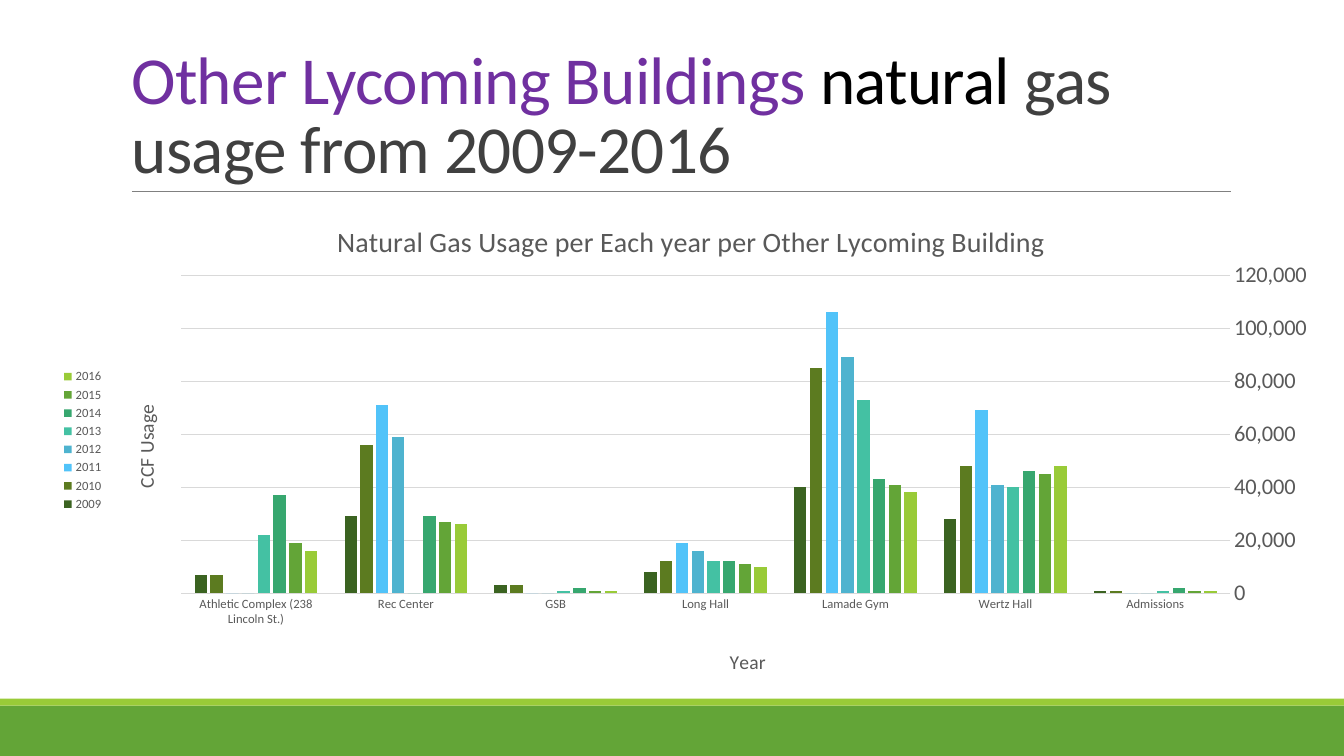
from lxml import etree
from pptx import Presentation
from pptx.chart.data import CategoryChartData
from pptx.dml.color import RGBColor
from pptx.enum import chart as charts, shapes, text
from pptx.oxml import ns
from pptx.util import Pt

FONT = "Calibri"
GREY, RULE_GREY, GRID_GREY = "595959", "808080", "D9D9D9"
BUILDINGS = ["Admissions", "Wertz Hall", "Lamade Gym", "Long Hall", "GSB",
             "Rec Center", "Athletic Complex (238 Lincoln St.)"]
# Year: colour, usage in thousands of CCF for each building
USAGE = {
    "2016": ("99CB38", [1, 48, 38, 10, 1, 26, 16]),
    "2015": ("63A537", [1, 45, 41, 11, 1, 27, 19]),
    "2014": ("37A76F", [2, 46, 43, 12, 2, 29, 37]),
    "2013": ("44C1A3", [1, 40, 73, 12, 1, 0, 22]),
    "2012": ("4EB3CF", [0, 41, 89, 16, 0, 59, 0]),
    "2011": ("51C3F9", [0, 69, 106, 19, 0, 71, 0]),
    "2010": ("5C7B20", [1, 48, 85, 12, 3, 56, 7]),
    "2009": ("3B6321", [1, 28, 40, 8, 3, 29, 7]),
}


def colour(value):
    return RGBColor.from_string(value)


def style_font(font, size, fill):
    font.name, font.size, font.bold = FONT, Pt(size), False
    font.color.rgb = colour(fill)


def add_band(page, top, height, fill):
    band = page.shapes.add_shape(shapes.MSO_SHAPE.RECTANGLE,
                                 0, Pt(top), Pt(960), Pt(height))
    band.shadow.inherit = False
    band.fill.solid()
    band.fill.fore_color.rgb = colour(fill)
    band.line.fill.background()


def add_rule(page, left, right, top):
    rule = page.shapes.add_connector(shapes.MSO_CONNECTOR.STRAIGHT,
                                     Pt(left), Pt(top), Pt(right), Pt(top))
    rule.line.color.rgb = colour(RULE_GREY)
    rule.line.width = Pt(0.5)
    etree.SubElement(rule._element.spPr, ns.qn("a:effectLst"))


def fill_title(page, spans):
    box = page.shapes.title
    box.left, box.top, box.width, box.height = Pt(86.7), Pt(22.5), Pt(792), Pt(114.5)
    frame = box.text_frame
    frame.word_wrap = True
    frame.auto_size = text.MSO_AUTO_SIZE.NONE
    frame.vertical_anchor = text.MSO_ANCHOR.BOTTOM
    para = frame.paragraphs[0]
    para.alignment = text.PP_ALIGN.LEFT
    para.line_spacing = 0.85
    for words, fill in spans:
        span = para.add_run()
        span.text = words
        style_font(span.font, 48, fill)
        span._r.get_or_add_rPr().set("spc", "-50")


def place(element, after=None, inner=False, **fractions):
    """Give a chart part a manual layout in fractions of the chart."""
    for old in element.findall(ns.qn("c:layout")):
        element.remove(old)
    layout = etree.Element(ns.qn("c:layout"))
    manual = etree.SubElement(layout, ns.qn("c:manualLayout"))
    settings = {"layoutTarget": "inner"} if inner else {}
    settings.update(xMode="edge", yMode="edge", **fractions)
    for name, value in settings.items():
        etree.SubElement(manual, ns.qn("c:" + name)).set("val", str(value))
    if after:
        element.find(ns.qn(after)).addnext(layout)
    else:
        element.insert(0, layout)


def set_chart_title(title, words, size, x, y, rotation=0):
    frame = title.text_frame
    frame.text = words
    style_font(frame.paragraphs[0].runs[0].font, size, GREY)
    frame._txBody.bodyPr.set("rot", str(rotation * 60000))
    place(title._element, "c:tx", x=x, y=y)


def style_axis(axis, size):
    axis.major_tick_mark = axis.minor_tick_mark = charts.XL_TICK_MARK.NONE
    style_font(axis.tick_labels.font, size, GREY)


def set_line(line_format):
    line_format.color.rgb = colour(GRID_GREY)
    line_format.width = Pt(0.75)


def add_usage_chart(page):
    data = CategoryChartData(number_format="#,##0")
    data.categories = BUILDINGS
    for year, (_, thousands) in USAGE.items():
        data.add_series(year, [value * 1000 for value in thousands])
    chart = page.shapes.add_chart(charts.XL_CHART_TYPE.COLUMN_CLUSTERED, Pt(35.3),
                                  Pt(136.8), Pt(917.3), Pt(355.7), data).chart
    style_font(chart.font, 10, "000000")
    set_chart_title(chart.chart_title, "Natural Gas Usage per Each year per Other "
                    "Lycoming Building", 20, 0.22, 0.05)

    # Columns
    plot = chart.plots[0]
    plot.gap_width, plot.overlap, plot.vary_by_categories = 219, -27, False
    for series, (fill, _) in zip(plot.series, USAGE.values()):
        series.format.fill.solid()
        series.format.fill.fore_color.rgb = colour(fill)
    plot_area = chart._chartSpace.find(".//" + ns.qn("c:plotArea"))
    place(plot_area, inner=True, x=0.1025, y=0.168, w=0.817, h=0.639)

    # Axes
    category, value = chart.category_axis, chart.value_axis
    style_axis(category, 9)
    category.reverse_order = True
    set_line(category.format.line)
    set_chart_title(category.axis_title, "Year", 14, 0.527, 0.91)
    style_axis(value, 16)
    value.minimum_scale, value.maximum_scale, value.major_unit = 0, 120000, 20000
    value.tick_labels.number_format = "#,##0"
    value.tick_labels.number_format_is_linked = False
    value.format.line.fill.background()
    set_line(value.major_gridlines.format.line)
    set_chart_title(value.axis_title, "CCF Usage", 14, 0.062, 0.42, rotation=-90)

    # Legend
    chart.has_legend = True
    chart.legend.position = charts.XL_LEGEND_POSITION.LEFT
    chart.legend.include_in_layout = False
    style_font(chart.legend.font, 9, GREY)
    place(chart.legend._element, "c:legendPos", x=0.006, y=0.35, w=0.04, h=0.3)


def main():
    deck = Presentation()
    deck.slide_width, deck.slide_height = Pt(960), Pt(540)
    page = deck.slides.add_slide(deck.slide_layouts[5])

    # Footer bands and title rule
    add_band(page, 504, 36, "63A537")
    add_band(page, 499, 5, "99CB38")
    add_rule(page, 94.3, 879, 136.8)

    # Title and chart
    fill_title(page, [("Other Lycoming Buildings ", "7030A0"), ("natural", "000000"),
                      (" gas usage from 2009-2016", "404040")])
    add_usage_chart(page)
    deck.save("out.pptx")


if __name__ == "__main__":
    main()
